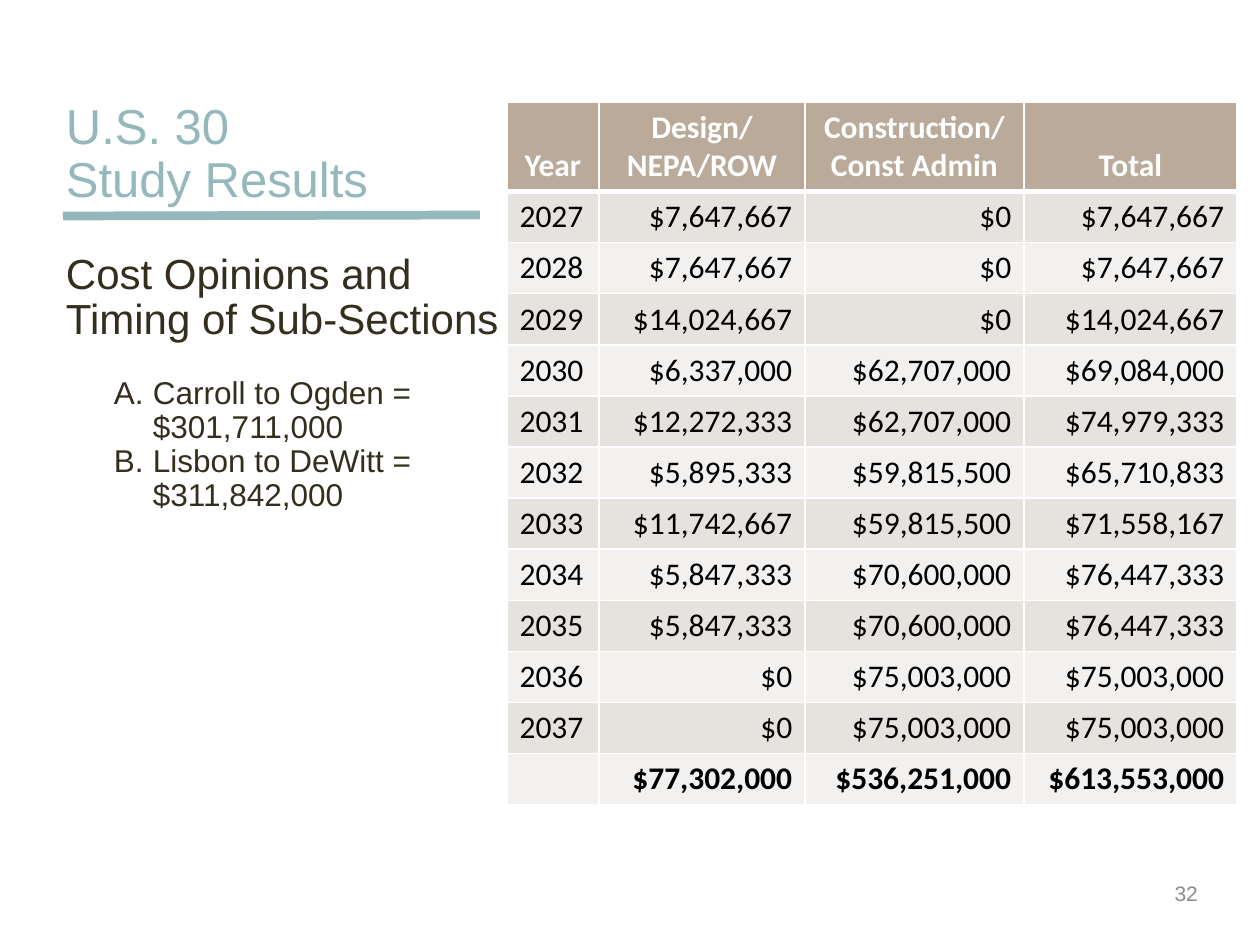
from lxml import etree
from pptx import Presentation
from pptx import util as u
from pptx.dml.color import RGBColor
from pptx.enum import shapes, text
from pptx.oxml.ns import qn

HUES = {"teal": "94B8BB", "ink": "342E1F", "gray": "8C8C8C", "tan": "B9AA9A",
        "dark": "E6E2DE", "pale": "F3F1EF", "white": "FFFFFF", "black": "000000"}
SIDES = {"l": text.PP_ALIGN.LEFT, "c": text.PP_ALIGN.CENTER, "r": text.PP_ALIGN.RIGHT}

HEAD = ["Year", "Design/NEPA/ROW", "Construction/ Const Admin", "Total"]
COSTS = [
    ("2027", "$7,647,667", "$0", "$7,647,667"),
    ("2028", "$7,647,667", "$0", "$7,647,667"),
    ("2029", "$14,024,667", "$0", "$14,024,667"),
    ("2030", "$6,337,000", "$62,707,000", "$69,084,000"),
    ("2031", "$12,272,333", "$62,707,000", "$74,979,333"),
    ("2032", "$5,895,333", "$59,815,500", "$65,710,833"),
    ("2033", "$11,742,667", "$59,815,500", "$71,558,167"),
    ("2034", "$5,847,333", "$70,600,000", "$76,447,333"),
    ("2035", "$5,847,333", "$70,600,000", "$76,447,333"),
    ("2036", "$0", "$75,003,000", "$75,003,000"),
    ("2037", "$0", "$75,003,000", "$75,003,000"),
    ("", "$77,302,000", "$536,251,000", "$613,553,000"),
]


def px(n):
    return u.Emu(round(n * 914400 / 126))


def hue(name):
    return RGBColor.from_string(HUES[name])


def write(frame, words, size=18, font="Arial", color="ink", bold=False,
          side="l", lead=None, gap=0, new=False):
    """Write one paragraph, in a new one if asked, and return it."""
    para = frame.add_paragraph() if new else frame.paragraphs[0]
    para.text = words
    para.alignment = SIDES[side]
    para.space_before = u.Pt(gap)
    para.space_after = u.Pt(0)
    if lead:
        para.line_spacing = lead
    for run in para.runs:
        run.font.size = u.Pt(size)
        run.font.name = font
        run.font.bold = bold
        run.font.color.rgb = hue(color)
    return para


def setup(frame, anchor, left, right):
    frame.word_wrap = True
    frame.auto_size = text.MSO_AUTO_SIZE.NONE
    frame.vertical_anchor = anchor
    frame.margin_left, frame.margin_right = px(left), px(right)
    frame.margin_top = frame.margin_bottom = px(6)


def box(slide, x, y, w, h, anchor=text.MSO_ANCHOR.TOP, left=0, right=13):
    frame = slide.shapes.add_textbox(px(x), px(y), px(w), px(h)).text_frame
    setup(frame, anchor, left, right)
    return frame


def letter(para):
    """Number the paragraph A., B., ... with a hanging indent."""
    props = para._p.get_or_add_pPr()
    props.set("marL", str(px(87)))
    props.set("indent", str(px(-39)))
    etree.SubElement(props, qn("a:buFont"), typeface="+mj-lt")
    etree.SubElement(props, qn("a:buAutoNum"), type="alphaUcPeriod")


def heading(slide, x, y, w, h):
    # Title
    title = slide.shapes.title
    title.left, title.top, title.width, title.height = px(x), px(y), px(w), px(h)
    setup(title.text_frame, text.MSO_ANCHOR.BOTTOM, 0, 13)
    write(title.text_frame, "U.S. 30 \vStudy Results", size=28, color="teal", lead=0.9)
    # Rule under the title
    rule = slide.shapes.add_connector(shapes.MSO_CONNECTOR.STRAIGHT,
                                      px(x - 3), px(y + h + 2), px(x + 414), px(y + h + 1))
    rule.line.color.rgb = hue("teal")
    rule.line.width = u.Pt(5)
    etree.SubElement(rule._element.spPr, qn("a:effectLst"))


def summary(slide, x, y, w, h):
    frame = box(slide, x, y, w, h)
    write(frame, "Cost Opinions and Timing of Sub-Sections", size=24, lead=0.9)
    parts = ["Carroll to Ogden = $301,711,000", "Lisbon to DeWitt = $311,842,000"]
    for i, part in enumerate(parts):
        letter(write(frame, part, lead=0.9, gap=0 if i else 19, new=True))


def edge(cell, base):
    """Give the cell white borders, with its own width at the bottom."""
    props = cell._tc.get_or_add_tcPr()
    for tag, width in (("lnL", 1), ("lnR", 1), ("lnT", 1), ("lnB", base)):
        line = etree.SubElement(props, qn("a:" + tag), w=str(u.Pt(width)))
        fill = etree.SubElement(line, qn("a:solidFill"))
        etree.SubElement(fill, qn("a:srgbClr"), val=HUES["white"])


def costs(slide, x, y, widths, top, step):
    rows = [HEAD] + COSTS
    tall = top + step * len(COSTS)
    grid = slide.shapes.add_table(len(rows), len(widths), px(x), px(y),
                                  px(sum(widths)), px(tall)).table
    for col, width in zip(grid.columns, widths):
        col.width = px(width)
    for r, row in enumerate(rows):
        grid.rows[r].height = px(step if r else top)
        for c, words in enumerate(row):
            cell = grid.cell(r, c)
            edge(cell, 1 if r else 3)
            cell.fill.solid()
            if r == 0:
                cell.fill.fore_color.rgb = hue("tan")
                cell.vertical_anchor = text.MSO_ANCHOR.BOTTOM
                write(cell.text_frame, words, font="Calibri", color="white",
                      bold=True, side="c")
            else:
                cell.fill.fore_color.rgb = hue("dark" if r % 2 else "pale")
                write(cell.text_frame, words, font="Calibri", color="black",
                      bold=r == len(COSTS), side="r" if c else "l")


def number(slide, x, y, w, h):
    frame = box(slide, x, y, w, h, text.MSO_ANCHOR.MIDDLE, left=13, right=0)
    write(frame, "32", size=12, color="gray", side="r")


def main():
    deck = Presentation()
    deck.slide_width, deck.slide_height = px(1260), px(945)
    slide = deck.slides.add_slide(deck.slide_layouts[5])
    heading(slide, 66, 63, 431, 151)
    summary(slide, 66, 247, 451, 276)
    costs(slide, 507, 102, [92, 206, 219, 213], 87, 51)
    number(slide, 1147, 868, 51, 51)
    deck.save("out.pptx")


if __name__ == "__main__":
    main()
